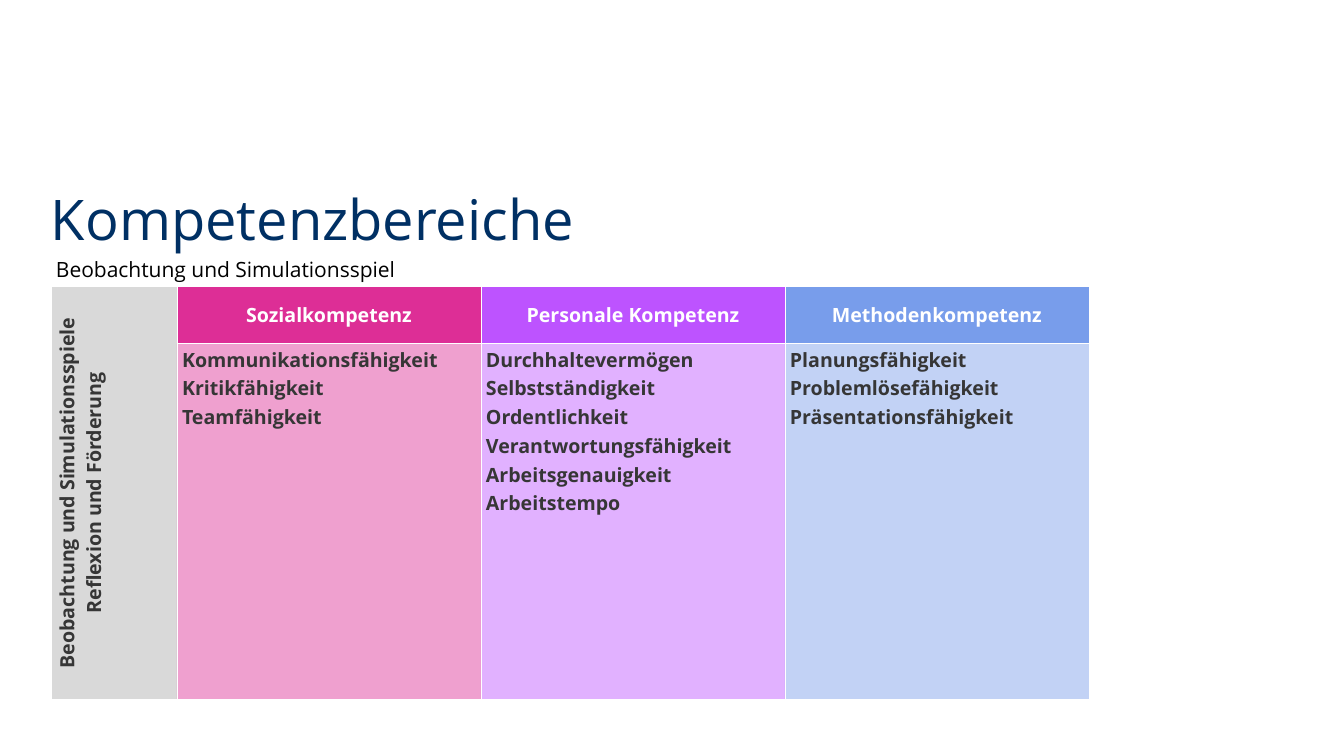
"""Build the slide "Kompetenzbereiche" with a table of competence areas."""
from lxml import etree
from pptx import Presentation
from pptx.dml.color import RGBColor
from pptx.enum.text import MSO_ANCHOR, MSO_AUTO_SIZE, PP_ALIGN
from pptx.oxml.ns import qn
from pptx.util import Cm, Pt

TOP, MIDDLE = MSO_ANCHOR.TOP, MSO_ANCHOR.MIDDLE
LEFT, CENTER = PP_ALIGN.LEFT, PP_ALIGN.CENTER
GROW, NO_FIT = MSO_AUTO_SIZE.SHAPE_TO_FIT_TEXT, MSO_AUTO_SIZE.NONE

NAVY = RGBColor(0x00, 0x30, 0x64)
BLACK = RGBColor(0x00, 0x00, 0x00)
WHITE = RGBColor(0xFF, 0xFF, 0xFF)
DARK = RGBColor(0x36, 0x36, 0x36)
GREY = RGBColor(0xD9, 0xD9, 0xD9)
PINK = RGBColor(0xDD, 0x2E, 0x96)
PURPLE = RGBColor(0xBD, 0x53, 0xFF)
BLUE = RGBColor(0x78, 0x9D, 0xEB)

FONT = "Open Sans"
MARGIN = Cm(2.57)
TINT = 45
COL_WIDTHS = [Cm(6.35)] + [Cm(15.32)] * 3
ROW_HEIGHTS = [Cm(2.87), Cm(15.27)]

TITLE_FONT = {"name": FONT, "size": Pt(80), "bold": False}
SUBTITLE_FONT = {"name": FONT, "size": Pt(30), "bold": False}
CELL_FONT = {"name": FONT, "size": Pt(28), "bold": True}

PHASES = ["Beobachtung und Simulationsspiele", "Reflexion und Förderung"]
AREAS = [
    ("Sozialkompetenz", PINK,
     ["Kommunikationsfähigkeit", "Kritikfähigkeit", "Teamfähigkeit"]),
    ("Personale Kompetenz", PURPLE,
     ["Durchhaltevermögen", "Selbstständigkeit", "Ordentlichkeit",
      "Verantwortungsfähigkeit", "Arbeitsgenauigkeit", "Arbeitstempo"]),
    ("Methodenkompetenz", BLUE,
     ["Planungsfähigkeit", "Problemlösefähigkeit", "Präsentationsfähigkeit"]),
]


def set_attrs(obj, values):
    """Set each attribute of obj named in values."""
    for name, value in values.items():
        setattr(obj, name, value)


def write_lines(tf, lines, font, color, **para):
    """Write one formatted paragraph per line."""
    for i, line in enumerate(lines):
        p = tf.add_paragraph() if i else tf.paragraphs[0]
        set_attrs(p, para)
        r = p.add_run()
        r.text = line
        set_attrs(r.font, font)
        r.font.color.rgb = color


def add_title(s, text):
    """Place and format the title placeholder."""
    sp = s.shapes.title
    set_attrs(sp, {"left": MARGIN, "top": Cm(9.88),
                   "width": Cm(29.41), "height": Cm(2.87)})
    set_attrs(sp.text_frame, {
        "margin_left": 0, "margin_top": 0, "margin_right": 0,
        "margin_bottom": 0, "word_wrap": False, "auto_size": GROW,
        "vertical_anchor": TOP})
    write_lines(sp.text_frame, [text], TITLE_FONT, NAVY,
                alignment=LEFT, line_spacing=Pt(79.8))


def add_subtitle(s, text):
    """Add the line of text below the title."""
    sp = s.shapes.add_textbox(MARGIN, Cm(12.5), Cm(30), Cm(1.7))
    set_attrs(sp.text_frame, {"word_wrap": True, "auto_size": NO_FIT})
    write_lines(sp.text_frame, [text], SUBTITLE_FONT, BLACK,
                line_spacing=Pt(45))


def add_borders(cell):
    """Draw thin white lines on all four sides of a cell."""
    tc_pr = cell._tc.get_or_add_tcPr()
    for side in ("lnL", "lnR", "lnT", "lnB"):
        ln = etree.SubElement(tc_pr, qn(f"a:{side}"), w=str(Pt(1)))
        fill = etree.SubElement(ln, qn("a:solidFill"))
        etree.SubElement(fill, qn("a:srgbClr"), val=str(WHITE))


def fill_cell(cell, color, alpha=100):
    """Fill a cell, translucent when alpha is below 100 percent."""
    cell.fill.solid()
    cell.fill.fore_color.rgb = color
    if alpha < 100:
        clr = cell._tc.tcPr.find(f"{qn('a:solidFill')}/{qn('a:srgbClr')}")
        etree.SubElement(clr, qn("a:alpha"), val=str(alpha * 1000))


def add_competence_table(s):
    """Add the table with one column per competence area."""
    frame = s.shapes.add_table(
        len(ROW_HEIGHTS), len(COL_WIDTHS), MARGIN, Cm(14.45),
        sum(COL_WIDTHS), sum(ROW_HEIGHTS))
    table = frame.table
    set_attrs(table, {"first_row": False, "horz_banding": False})
    for col, width in zip(table.columns, COL_WIDTHS):
        col.width = width
    for row, height in zip(table.rows, ROW_HEIGHTS):
        row.height = height
    for cell in table.iter_cells():
        add_borders(cell)

    side = table.cell(0, 0)
    side.merge(table.cell(1, 0))
    side.vertical_anchor = MIDDLE
    side._tc.tcPr.set("vert", "vert270")
    fill_cell(side, GREY)
    write_lines(side.text_frame, PHASES, CELL_FONT, DARK, alignment=CENTER)

    for c, (area, color, skills) in enumerate(AREAS, start=1):
        head, body = table.cell(0, c), table.cell(1, c)
        head.vertical_anchor = MIDDLE
        fill_cell(head, color)
        write_lines(head.text_frame, [area], CELL_FONT, WHITE,
                    alignment=CENTER)
        fill_cell(body, color, TINT)
        write_lines(body.text_frame, skills, CELL_FONT, DARK,
                    space_after=Pt(3))


def main():
    """Build and save the presentation."""
    prs = Presentation()
    set_attrs(prs, {"slide_width": Cm(67.74), "slide_height": Cm(38.1)})
    s = prs.slides.add_slide(prs.slide_layouts.get_by_name("Title Only"))
    add_title(s, "Kompetenzbereiche")
    add_subtitle(s, "Beobachtung und Simulationsspiel")
    add_competence_table(s)
    prs.save("out.pptx")


if __name__ == "__main__":
    main()
